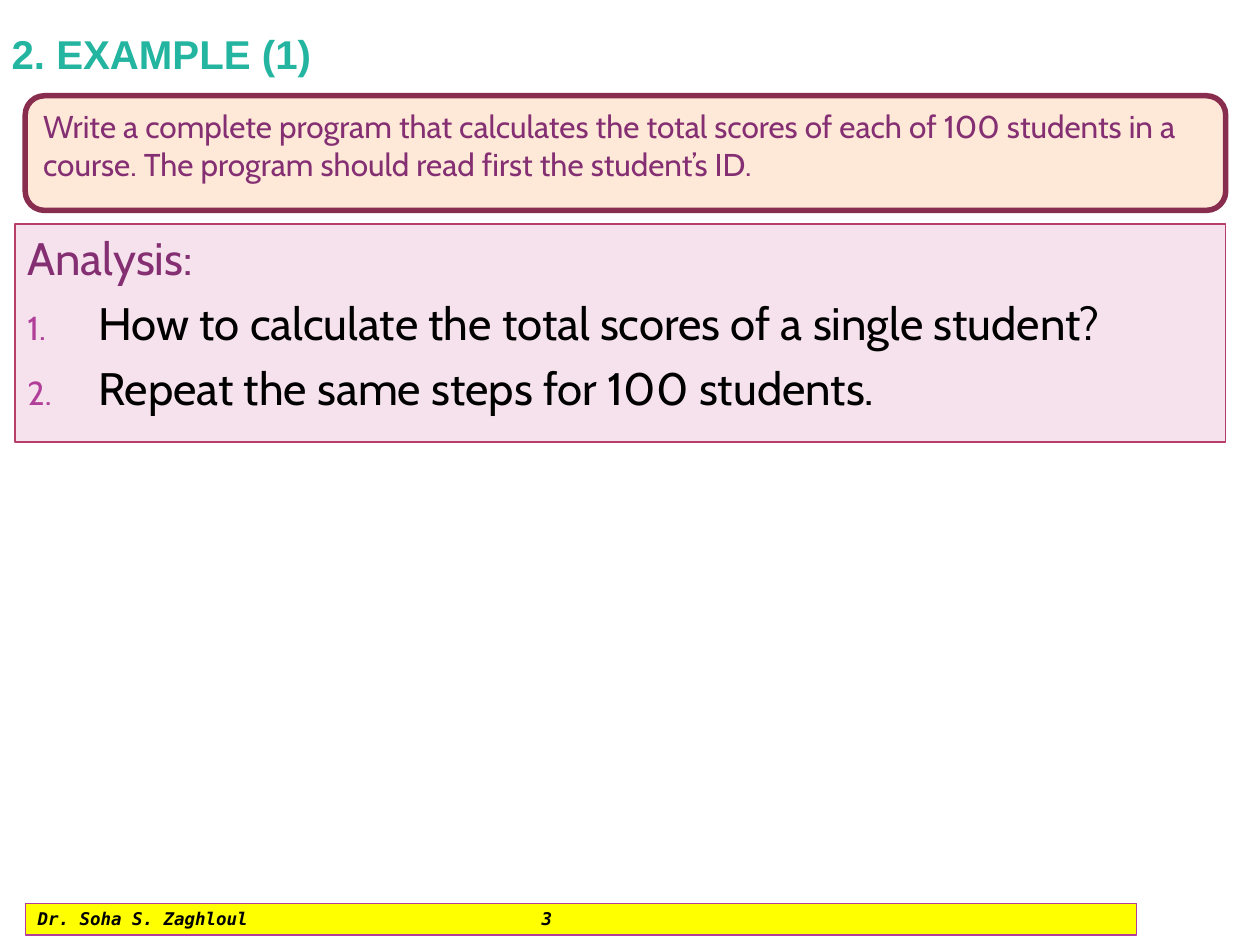
"""Build the example slide: a task statement, its analysis and a footer bar."""
from dataclasses import dataclass
from typing import Optional

from lxml.etree import SubElement
from pptx import Presentation
from pptx.dml.color import RGBColor
from pptx.enum.shapes import MSO_SHAPE as Shape
from pptx.enum.text import MSO_ANCHOR as Anchor, MSO_AUTO_SIZE as AutoSize, PP_ALIGN as Align
from pptx.oxml.ns import qn
from pptx.util import Pt


@dataclass(frozen=True)
class TextStyle:
    font: str
    size: float
    color: str
    bold: bool = False
    italic: bool = False


@dataclass(frozen=True)
class PanelStyle:
    fill: str
    line: str
    width: float = 0.75


@dataclass(frozen=True)
class Theme:
    title: TextStyle = TextStyle("Arial", 23, "24B5A1", bold=True)
    task: TextStyle = TextStyle("Cabin", 18, "852F73")
    heading: TextStyle = TextStyle("Cabin", 26, "852F73")
    step: TextStyle = TextStyle("Cabin", 26, "000000")
    footer: TextStyle = TextStyle("DejaVu Sans Mono", 10, "000000", bold=True, italic=True)
    task_panel: PanelStyle = PanelStyle("FEE8D8", "882D4D", 3.15)
    analysis_panel: PanelStyle = PanelStyle("F5E2ED", "B83D68")
    footer_panel: PanelStyle = PanelStyle("FFFF00", "B13F9A")
    number: str = "B13F9A"
    number_percent: int = 73


@dataclass(frozen=True)
class Box:
    left: float
    top: float
    width: float
    height: float

    def lengths(self) -> tuple:
        return tuple(Pt(v) for v in (self.left, self.top, self.width, self.height))


@dataclass(frozen=True)
class Line:
    text: str
    style: TextStyle
    numbered: bool = False


THEME = Theme()
STEP_INDENT = 40.5
TITLE_BOX = Box(3, 9.5, 641, 35)
TASK_BOX = Box(14.4, 54.7, 686, 65.5)
ANALYSIS_BOX = Box(8.5, 128, 692, 124.6)
FOOTER_BOX = Box(14.4, 516.3, 635, 18)
PAGE_NUMBER_TAB = 288

ANALYSIS = (
    Line("Analysis:", THEME.heading),
    Line("How to calculate the total scores of a single student?", THEME.step, True),
    Line("Repeat the same steps for 100 students.", THEME.step, True),
)


def place(shape, box: Box) -> None:
    shape.left, shape.top, shape.width, shape.height = box.lengths()


def paint(shape, style: PanelStyle) -> None:
    shape.fill.solid()
    shape.fill.fore_color.rgb = RGBColor.from_string(style.fill)
    shape.line.color.rgb = RGBColor.from_string(style.line)
    shape.line.width = Pt(style.width)


def prepare_frame(shape, anchor: Anchor):
    frame = shape.text_frame
    frame.word_wrap = True
    frame.auto_size = AutoSize.NONE
    frame.vertical_anchor = anchor
    return frame


def add_run(paragraph, text: str, style: TextStyle) -> None:
    paragraph.alignment = Align.LEFT
    run = paragraph.add_run()
    run.text = text
    font = run.font
    font.name, font.size = style.font, Pt(style.size)
    font.bold, font.italic = style.bold, style.italic
    font.color.rgb = RGBColor.from_string(style.color)


def set_numbering(paragraph, line: Line) -> None:
    indent = Pt(STEP_INDENT) if line.numbered else 0
    properties = paragraph._p.get_or_add_pPr()
    properties.set("marL", str(indent))
    properties.set("indent", str(-indent))
    if not line.numbered:
        SubElement(properties, qn("a:buNone"))
        return
    color = SubElement(properties, qn("a:buClr"))
    SubElement(color, qn("a:srgbClr"), val=THEME.number)
    SubElement(properties, qn("a:buSzPct"), val=str(THEME.number_percent * 1000))
    SubElement(properties, qn("a:buFont"), typeface=line.style.font)
    SubElement(properties, qn("a:buAutoNum"), type="arabicPeriod")


def add_panel(slide, kind: Shape, box: Box, panel: PanelStyle, line: Line,
              anchor: Anchor = Anchor.TOP, tab: Optional[float] = None) -> None:
    shape = slide.shapes.add_shape(kind, *box.lengths())
    shape.shadow.inherit = False
    paint(shape, panel)
    paragraph = prepare_frame(shape, anchor).paragraphs[0]
    if tab is not None:
        tabs = SubElement(paragraph._p.get_or_add_pPr(), qn("a:tabLst"))
        SubElement(tabs, qn("a:tab"), pos=str(Pt(tab)), algn="l")
    add_run(paragraph, line.text, line.style)


def fill_title(title) -> None:
    place(title, TITLE_BOX)
    frame = prepare_frame(title, Anchor.BOTTOM)
    frame.margin_left = frame.margin_right = Pt(3.6)
    frame.margin_top = frame.margin_bottom = 0
    add_run(frame.paragraphs[0], "2. EXAMPLE (1)", THEME.title)


def fill_analysis(body) -> None:
    place(body, ANALYSIS_BOX)
    paint(body, THEME.analysis_panel)
    frame = prepare_frame(body, Anchor.TOP)
    for index, line in enumerate(ANALYSIS):
        paragraph = frame.add_paragraph() if index else frame.paragraphs[0]
        set_numbering(paragraph, line)
        paragraph.space_before = Pt(6 if index else 0)
        add_run(paragraph, line.text, line.style)


def main() -> None:
    deck = Presentation()
    deck.slide_width, deck.slide_height = Pt(720), Pt(540)
    slide = deck.slides.add_slide(deck.slide_layouts[1])
    fill_title(slide.shapes.title)
    fill_analysis(slide.placeholders[1])
    add_panel(slide, Shape.RECTANGLE, FOOTER_BOX, THEME.footer_panel,
              Line("Dr. Soha S. Zaghloul\t3", THEME.footer), Anchor.BOTTOM, PAGE_NUMBER_TAB)
    add_panel(slide, Shape.ROUNDED_RECTANGLE, TASK_BOX, THEME.task_panel,
              Line("Write a complete program that calculates the total scores of each of 100 "
                   "students in a course. The program should read first the student’s ID.",
                   THEME.task))
    deck.save("out.pptx")


if __name__ == "__main__":
    main()
